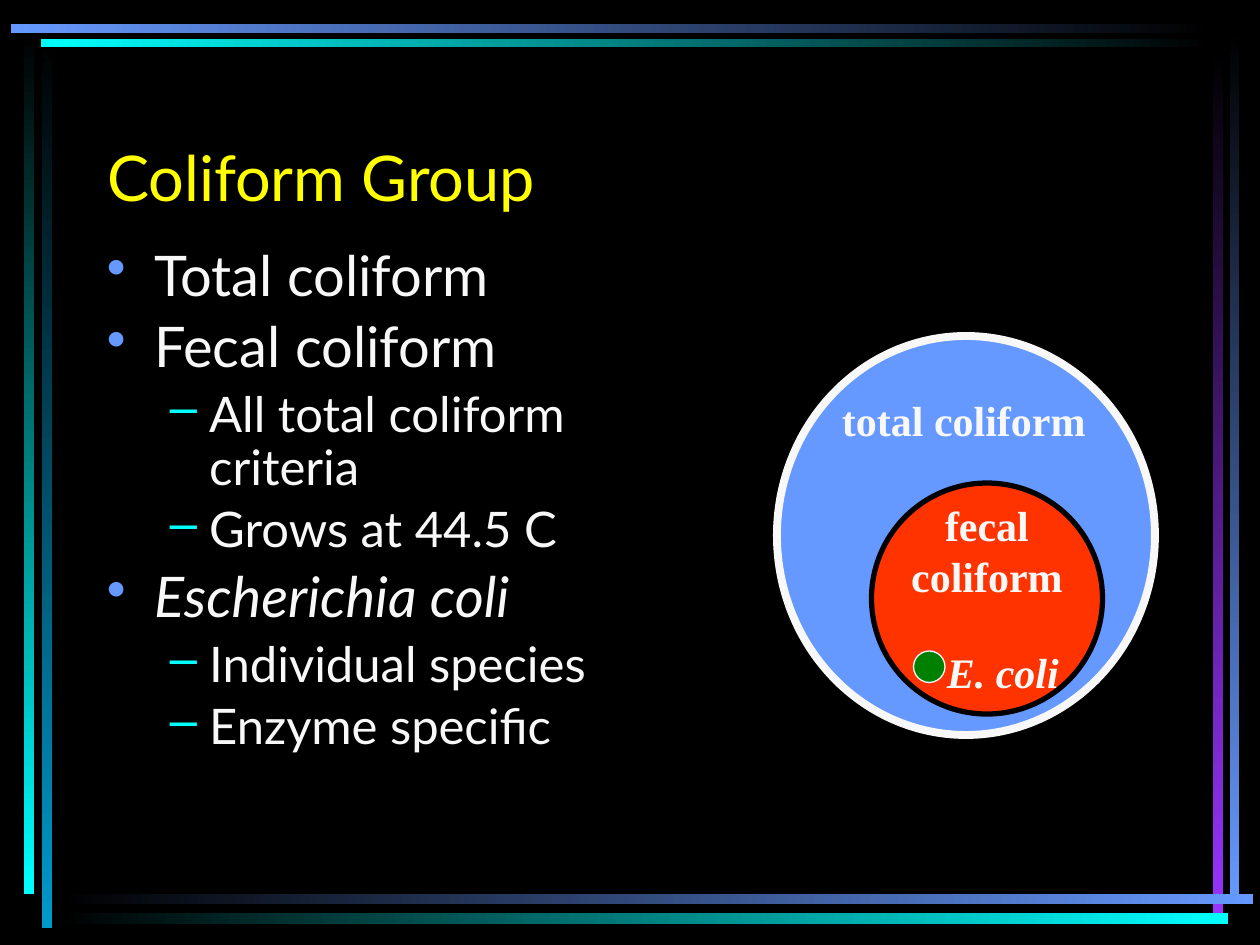
from dataclasses import dataclass

from lxml.etree import SubElement
from pptx import Presentation
from pptx.dml.color import RGBColor
from pptx.enum.shapes import MSO_SHAPE
from pptx.enum.text import MSO_ANCHOR, MSO_AUTO_SIZE, PP_ALIGN
from pptx.oxml.ns import qn
from pptx.util import Emu, Pt

PX = 9525  # EMU per px, 96 px to the inch


@dataclass(frozen=True)
class Theme:
    black: str = "000000"
    white: str = "F8F8F8"
    yellow: str = "FFFF00"
    blue: str = "6699FF"
    cyan: str = "00FFFF"
    teal: str = "0099CC"
    purple: str = "9933FF"
    red: str = "FF3300"
    green: str = "008000"
    body_font: str = "Lato"
    label_font: str = "Times New Roman"
    title_size: int = 36
    level_sizes: tuple = (32, 28)
    label_size: int = 24


T = Theme()


@dataclass(frozen=True)
class Box:
    x: int
    y: int
    w: int
    h: int

    def emu(self) -> tuple:
        return tuple(Emu(v * PX) for v in (self.x, self.y, self.w, self.h))


@dataclass(frozen=True)
class Bar:
    box: Box
    start: str
    end: str


@dataclass(frozen=True)
class Circle:
    box: Box
    fill: str
    line: str
    width: float


@dataclass(frozen=True)
class Label:
    box: Box
    text: str
    align: PP_ALIGN = PP_ALIGN.LEFT
    italic: bool = False


@dataclass(frozen=True)
class Item:
    text: str
    level: int = 0
    italic: bool = False


@dataclass(frozen=True)
class Bullet:
    char: str
    color: str
    margin: int
    hang: int


BULLETS = (Bullet("•", T.blue, 36, 36), Bullet("–", T.cyan, 78, 30))

BARS = (
    # left
    Bar(Box(32, 27, 8, 680), T.black, T.teal),
    Bar(Box(18, 24, 8, 657), T.black, T.cyan),
    # right
    Bar(Box(937, 23, 7, 665), T.black, T.blue),
    Bar(Box(924, 40, 8, 656), T.black, T.purple),
    # bottom
    Bar(Box(43, 681, 912, 8), T.black, T.blue),
    Bar(Box(43, 696, 893, 8), T.black, T.cyan),
    # top
    Bar(Box(31, 30, 895, 6), T.cyan, T.black),
    Bar(Box(8, 18, 918, 7), T.blue, T.black),
)

ITEMS = (
    Item("Total coliform"),
    Item("Fecal coliform"),
    Item("All total coliform criteria", 1),
    Item("Grows at 44.5 C", 1),
    Item("Escherichia coli", italic=True),
    Item("Individual species", 1),
    Item("Enzyme specific", 1),
)

CIRCLES = (
    Circle(Box(592, 256, 288, 304), T.blue, T.white, 4.5),
    Circle(Box(664, 368, 176, 176), T.red, T.black, 3),
    Circle(Box(696, 496, 24, 24), T.green, T.white, 0.75),
)

LABELS = (
    Label(Box(632, 296, 216, 48), "total coliform"),
    Label(Box(672, 376, 160, 86), "fecal coliform", PP_ALIGN.CENTER),
    Label(Box(712, 488, 136, 48), "E. coli", italic=True),
)


def rgb(color: str) -> RGBColor:
    return RGBColor.from_string(color)


def style_text(p, font: str, size: int, color: str, bold=False, italic=False) -> None:
    for r in p.runs:
        f = r.font
        f.name, f.size, f.bold, f.italic = font, Pt(size), bold, italic
        f.color.rgb = rgb(color)


def space_before(p, percent: int) -> None:
    spc = SubElement(p._p.get_or_add_pPr(), qn("a:spcBef"))
    SubElement(spc, qn("a:spcPct")).set("val", str(percent * 1000))


def set_bullet(p, bullet: Bullet) -> None:
    pPr = p._p.get_or_add_pPr()
    pPr.set("marL", str(bullet.margin * PX))
    pPr.set("indent", str(-bullet.hang * PX))
    clr = SubElement(pPr, qn("a:buClr"))
    SubElement(clr, qn("a:srgbClr")).set("val", bullet.color)
    SubElement(pPr, qn("a:buChar")).set("char", bullet.char)


def add_bar(s, bar: Bar) -> None:
    sp = s.shapes.add_shape(MSO_SHAPE.RECTANGLE, *bar.box.emu())
    sp.shadow.inherit = False
    sp.line.fill.background()
    sp.fill.gradient()
    # Fade along the longer side: downwards or to the right
    sp.fill.gradient_angle = 270 if bar.box.h > bar.box.w else 0
    for stop, color in zip(sp.fill.gradient_stops, (bar.start, bar.end)):
        stop.color.rgb = rgb(color)


def add_circle(s, circle: Circle) -> None:
    sp = s.shapes.add_shape(MSO_SHAPE.OVAL, *circle.box.emu())
    sp.shadow.inherit = False
    sp.fill.solid()
    sp.fill.fore_color.rgb = rgb(circle.fill)
    sp.line.color.rgb = rgb(circle.line)
    sp.line.width = Pt(circle.width)


def add_label(s, label: Label) -> None:
    tf = s.shapes.add_textbox(*label.box.emu()).text_frame
    tf.word_wrap = True
    tf.auto_size = MSO_AUTO_SIZE.SHAPE_TO_FIT_TEXT
    p = tf.paragraphs[0]
    p.text, p.alignment = label.text, label.align
    space_before(p, 50)
    style_text(p, T.label_font, T.label_size, T.white, True, label.italic)


def set_title(s, box: Box, text: str) -> None:
    sp = s.shapes.title
    sp.left, sp.top, sp.width, sp.height = box.emu()
    tf = sp.text_frame
    tf.text = text
    tf.auto_size = MSO_AUTO_SIZE.NONE
    tf.vertical_anchor = MSO_ANCHOR.BOTTOM
    p = tf.paragraphs[0]
    p.alignment = PP_ALIGN.LEFT
    style_text(p, T.body_font, T.title_size, T.yellow)


def add_list(s, box: Box, items: tuple) -> None:
    tf = s.shapes.add_textbox(*box.emu()).text_frame
    tf.word_wrap = True
    tf.text = "\n".join(item.text for item in items)
    for p, item in zip(tf.paragraphs, items):
        p.level, p.line_spacing = item.level, 0.9
        space_before(p, 20)
        set_bullet(p, BULLETS[item.level])
        style_text(p, T.body_font, T.level_sizes[item.level], T.white, italic=item.italic)


def main() -> None:
    prs = Presentation()
    prs.slide_width, prs.slide_height = Emu(960 * PX), Emu(720 * PX)
    s = prs.slides.add_slide(prs.slide_layouts[5])
    s.background.fill.solid()
    s.background.fill.fore_color.rgb = rgb(T.black)

    # Frame of fading bars
    for bar in BARS:
        add_bar(s, bar)

    # Title and bullet list
    set_title(s, Box(72, 64, 816, 104), "Coliform Group")
    add_list(s, Box(72, 184, 480, 440), ITEMS)

    # Nested circles and their labels
    for circle in CIRCLES:
        add_circle(s, circle)
    for label in LABELS:
        add_label(s, label)

    prs.save("out.pptx")


if __name__ == "__main__":
    main()
